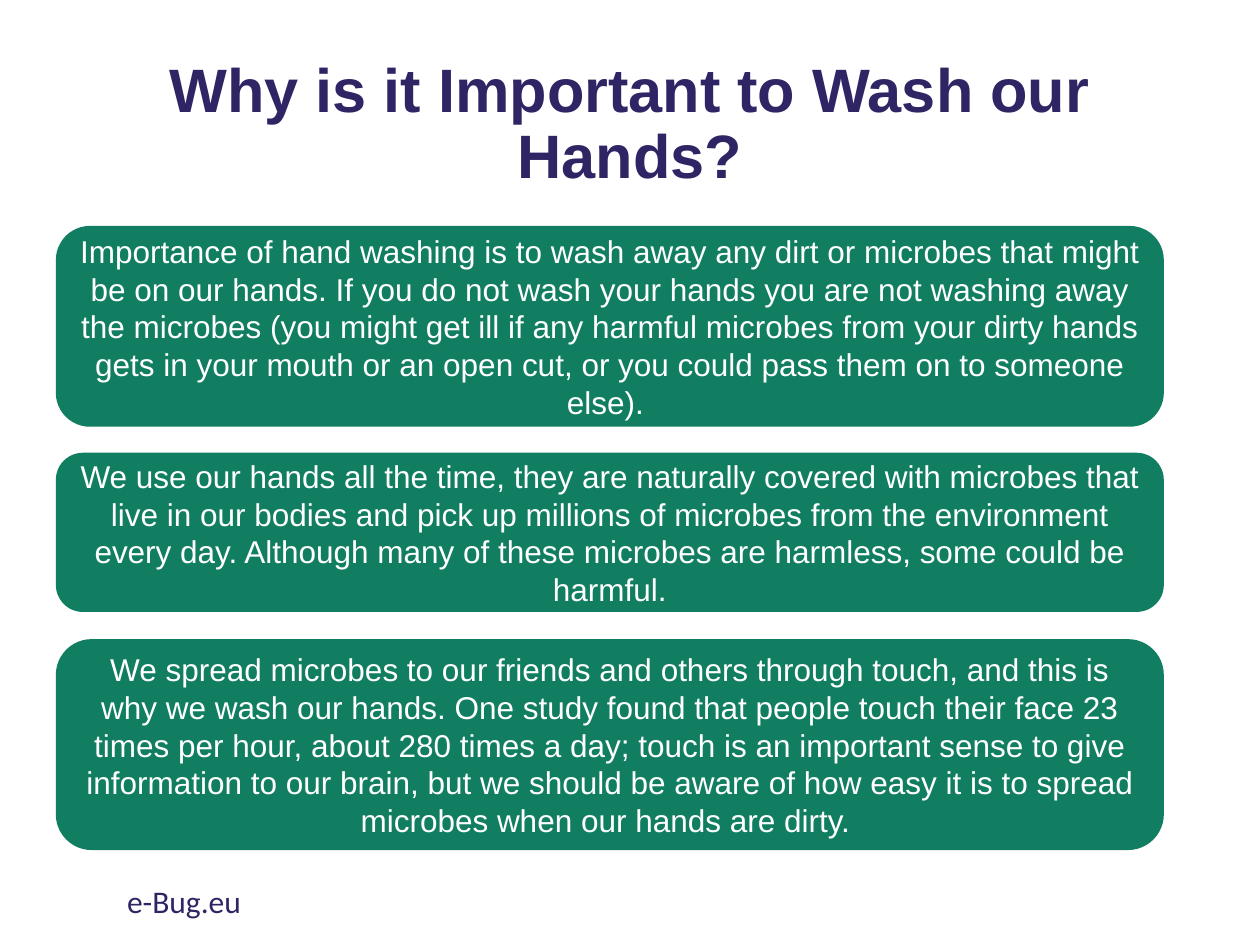
from pptx import Presentation
from pptx.dml.color import RGBColor
from pptx.enum.shapes import MSO_SHAPE as SHAPE
from pptx.enum.text import MSO_ANCHOR as ANCHOR, PP_ALIGN as ALIGN
from pptx.util import Inches, Pt

COLORS = {"navy": "302564", "green": "117E62", "white": "FFFFFF"}

REASONS = [  # top, height, text
    (1.8, 1.58,
     "Importance of hand washing is to wash away any dirt or microbes that "
     "might be on our hands. If you do not wash your hands you are not washing "
     "away the microbes (you might get ill if any harmful microbes from your "
     "dirty hands gets in your mouth or an open cut, or you could pass them on "
     "to someone else). "),
    (3.6, 1.25,
     "We use our hands all the time, they are naturally covered with microbes "
     "that live in our bodies and pick up millions of microbes from the "
     "environment every day. Although many of these microbes are harmless, "
     "some could be harmful."),
    (5.08, 1.66,
     "We spread microbes to our friends and others through touch, and this is "
     "why we wash our hands. One study found that people touch their face 23 "
     "times per hour, about 280 times a day; touch is an important sense to "
     "give information to our brain, but we should be aware of how easy it is "
     "to spread microbes when our hands are dirty. "),
]


class SlideBuilder:
    """Holds the shared text style and the slide being filled."""

    style = {"name": "Arial", "size": Pt(18), "bold": False}

    def __init__(self, slide):
        self.slide = slide

    def set_text(self, sp, text, color, align=ALIGN.CENTER,
                 anchor=ANCHOR.MIDDLE, spacing=1.0, **changes):
        tf = sp.text_frame
        tf.word_wrap = True
        tf.vertical_anchor = anchor
        p = tf.paragraphs[0]
        p.alignment = align
        p.line_spacing = spacing
        r = p.add_run()
        r.text = text
        for name, value in {**self.style, **changes}.items():
            setattr(r.font, name, value)
        r.font.color.rgb = RGBColor.from_string(COLORS[color])

    def text_box(self, box, text, color, **format_values):
        sp = self.slide.shapes.add_textbox(*map(Inches, box))
        self.set_text(sp, text, color, **format_values)

    def panel(self, box, text):
        sp = self.slide.shapes.add_shape(SHAPE.ROUNDED_RECTANGLE,
                                         *map(Inches, box))
        sp.shadow.inherit = False
        green = RGBColor.from_string(COLORS["green"])
        sp.fill.solid()
        sp.fill.fore_color.rgb = green
        sp.line.color.rgb = green
        sp.line.width = Pt(1)
        self.set_text(sp, text, "white")


def main():
    prs = Presentation()
    prs.slide_width, prs.slide_height = Inches(10), Inches(7.5)
    s = SlideBuilder(prs.slides.add_slide(prs.slide_layouts[6]))
    s.text_box((0.69, 0.27, 8.62, 1.45),
               "Why is it Important to Wash our Hands?", "navy",
               spacing=0.9, size=Pt(35), bold=True)
    s.text_box((0.91, 6.95, 3.38, 0.4), "e-Bug.eu", "navy",
               align=ALIGN.LEFT, anchor=ANCHOR.TOP, name="Calibri")
    for top, height, text in REASONS:
        s.panel((0.45, top, 8.78, height), text)
    prs.save("out.pptx")


if __name__ == "__main__":
    main()
